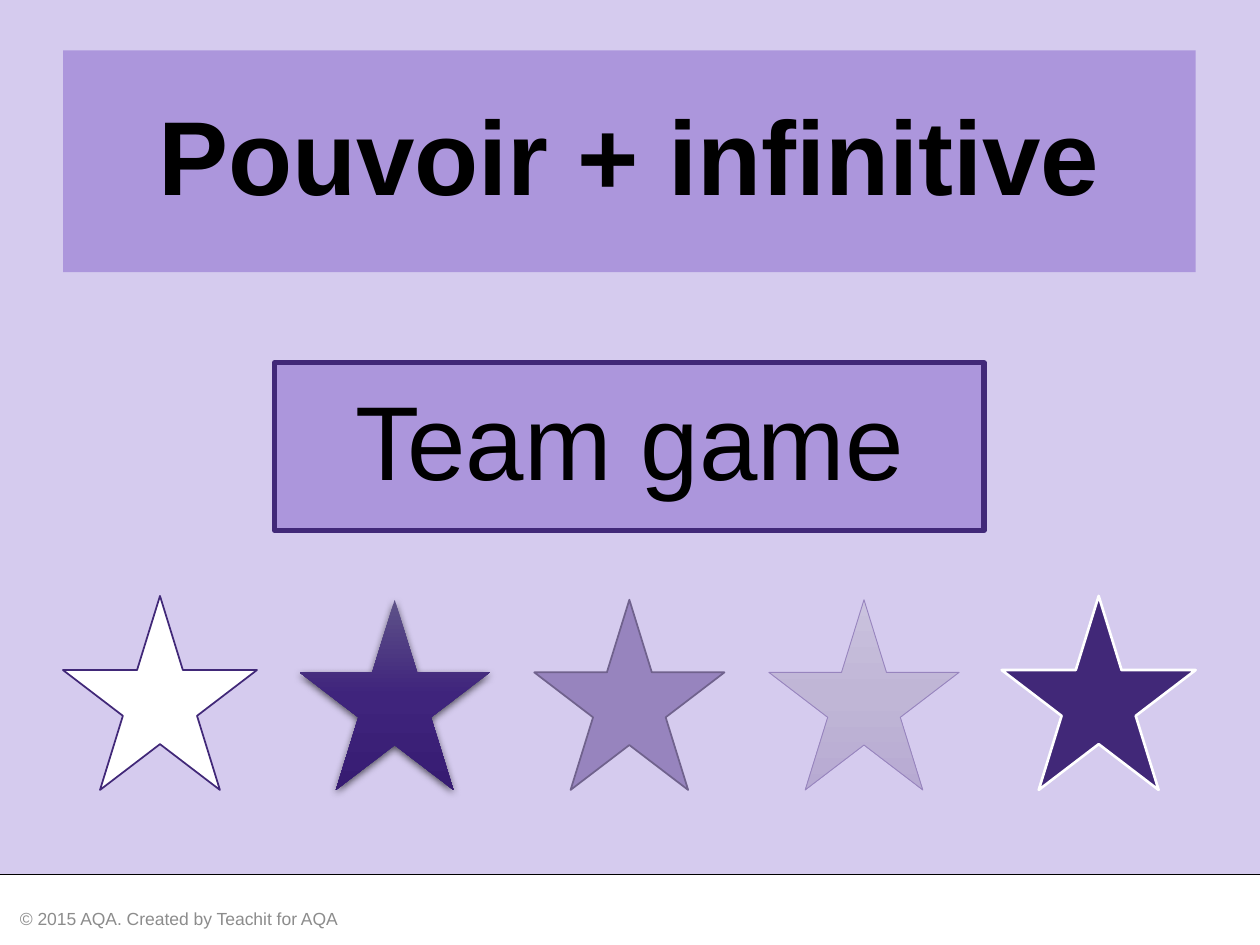
from copy import deepcopy
from dataclasses import dataclass
from typing import Optional

from lxml.etree import SubElement
from pptx import Presentation
from pptx.dml.color import RGBColor
from pptx.enum.shapes import MSO_CONNECTOR as Link, MSO_SHAPE as Shape
from pptx.enum.text import MSO_ANCHOR as Anchor, MSO_AUTO_SIZE as Fit, PP_ALIGN as Align
from pptx.oxml.ns import qn
from pptx.util import Inches, Pt

BLACK = RGBColor(0x00, 0x00, 0x00)
WHITE = RGBColor(0xFF, 0xFF, 0xFF)
GREY = RGBColor(0x8C, 0x8C, 0x8C)
PALE = RGBColor(0xD5, 0xCB, 0xEE)
LILAC = RGBColor(0xAC, 0x96, 0xDC)
MAUVE = RGBColor(0x97, 0x84, 0xBE)
DUSK = RGBColor(0x70, 0x62, 0x8D)
PURPLE = RGBColor(0x41, 0x28, 0x78)
DEEP = (RGBColor(0x5E, 0x52, 0x89), RGBColor(0x3F, 0x24, 0x7C), RGBColor(0x37, 0x1C, 0x72))
MIST = (RGBColor(0xCA, 0xC2, 0xDE), RGBColor(0xC0, 0xB6, 0xD6), RGBColor(0xB7, 0xAA, 0xD2))


@dataclass
class Star:
    size: float
    fill: tuple
    line: Optional[RGBColor] = None
    width: float = 1
    shade: bool = False


STARS = [
    Star(1.54, (WHITE,), PURPLE),
    Star(1.51, DEEP, shade=True),
    Star(1.51, (MAUVE,), DUSK),
    Star(1.51, MIST, MAUVE, 0.5),
    Star(1.54, (PURPLE,), WHITE, 1.5),
]
FIRST, LAST, BASE = 1.27, 8.72, 6.27


def paint(shape, fill: tuple) -> None:
    if len(fill) == 1:
        shape.fill.solid()
        shape.fill.fore_color.rgb = fill[0]
        return
    shape.fill.gradient()
    shape.fill.gradient_angle = 270
    stops = shape._element.spPr.find(".//" + qn("a:gsLst"))
    stops.insert(1, deepcopy(stops[0]))
    for i, (stop, color) in enumerate(zip(shape.fill.gradient_stops, fill)):
        stop.position = i / (len(fill) - 1)
        stop.color.rgb = color


def add_shade(shape) -> None:
    effects = shape._element.spPr.find(qn("a:effectLst"))
    shade = SubElement(effects, qn("a:outerShdw"), blurRad=str(Pt(4.5)),
                       dist=str(Pt(1.5)), dir="5400000", rotWithShape="0")
    color = SubElement(shade, qn("a:srgbClr"), val=str(BLACK))
    SubElement(color, qn("a:alpha"), val="63000")


def add_form(slide, kind, left: float, top: float, wide: float, high: float,
             fill: tuple, line: Optional[RGBColor] = None, width: float = 1):
    shape = slide.shapes.add_shape(kind, Inches(left), Inches(top), Inches(wide), Inches(high))
    shape.shadow.inherit = False
    paint(shape, fill)
    if line is None:
        shape.line.fill.background()
    else:
        shape.line.color.rgb = line
        shape.line.width = Pt(width)
    return shape


def write(shape, text: str, *, size: float, color: RGBColor = BLACK, bold: bool = False,
          align=Align.CENTER, space: float = 0.9) -> None:
    frame = shape.text_frame
    frame.word_wrap = True
    frame.auto_size = Fit.NONE
    frame.vertical_anchor = Anchor.MIDDLE
    para = frame.paragraphs[0]
    para.alignment = align
    para.line_spacing = space
    para.space_before = Pt(0)
    run = para.add_run()
    run.text = text
    run.font.name = "Arial"
    run.font.size = Pt(size)
    run.font.bold = bold
    run.font.color.rgb = color


def add_foot(slide) -> None:
    add_form(slide, Shape.RECTANGLE, 0, 6.94, 10, 0.56, (WHITE,))
    rule = slide.shapes.add_connector(Link.STRAIGHT, 0, Inches(6.94), Inches(10), Inches(6.94))
    rule.line.color.rgb = BLACK
    rule.line.width = Pt(0.5)
    SubElement(rule._element.spPr, qn("a:effectLst"))
    note = slide.shapes.add_textbox(Inches(0.06), Inches(7.09), Inches(4), Inches(0.4))
    write(note, "© 2015 AQA. Created by Teachit for AQA", size=10, color=GREY,
          align=Align.LEFT, space=1)


def add_stars(slide) -> None:
    step = (LAST - FIRST) / (len(STARS) - 1)
    for i, star in enumerate(STARS):
        left = FIRST + i * step - star.size / 2
        shape = add_form(slide, Shape.STAR_5_POINT, left, BASE - star.size,
                         star.size, star.size, star.fill, star.line, star.width)
        if star.shade:
            add_shade(shape)


def main() -> None:
    deck = Presentation()
    deck.slide_width, deck.slide_height = Inches(10), Inches(7.5)
    slide = deck.slides.add_slide(deck.slide_layouts[5])
    slide.background.fill.solid()
    slide.background.fill.fore_color.rgb = PALE

    title = slide.shapes.title
    title.left, title.top = Inches(0.5), Inches(0.4)
    title.width, title.height = Inches(8.99), Inches(1.76)
    paint(title, (LILAC,))
    write(title, "Pouvoir + infinitive", size=60, bold=True)

    game = add_form(slide, Shape.RECTANGLE, 2.18, 2.88, 5.63, 1.33, (LILAC,), PURPLE, 3)
    write(game, "Team game", size=60)
    add_stars(slide)
    add_foot(slide)
    deck.save("out.pptx")


if __name__ == "__main__":
    main()
